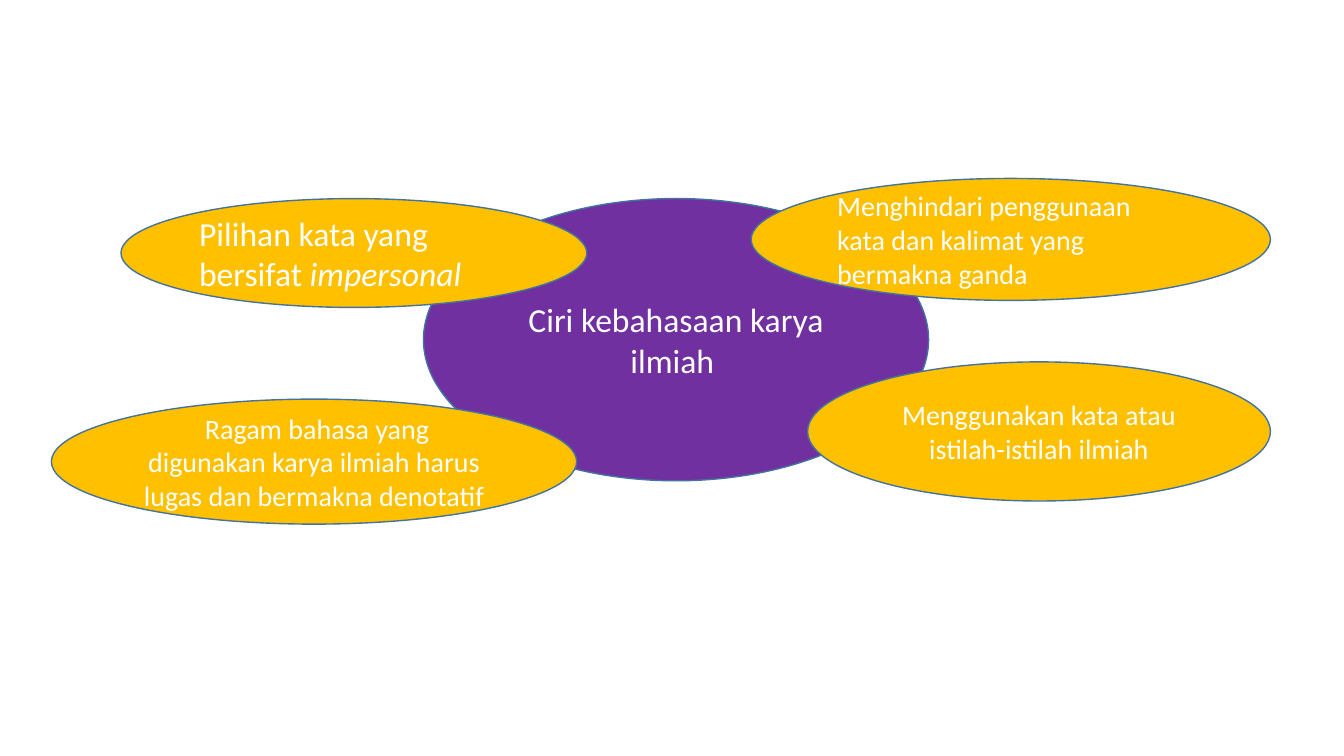
from pptx import Presentation
from pptx.dml.color import RGBColor
from pptx.enum.shapes import MSO_SHAPE
from pptx.enum.text import MSO_ANCHOR, PP_ALIGN
from pptx.util import Inches, Pt

ELLIPSE = MSO_SHAPE.OVAL
MIDDLE = MSO_ANCHOR.MIDDLE
LEFT = PP_ALIGN.LEFT
CENTER = PP_ALIGN.CENTER

FONT = "Calibri"
WHITE = "FFFFFF"
PURPLE = "7030A0"
GOLD = "FFC000"
OUTLINE = "43739E"

TOPIC = ((4.2, 1.97, 5.01, 2.8), "Ciri kebahasaan karya ilmiah ", 24, CENTER)
TRAITS = [
    ((1.2, 1.97, 4.62, 1.08), "Pilihan kata yang bersifat ", 24, LEFT, "impersonal"),
    ((7.45, 1.77, 5.15, 1.21),
     "Menghindari penggunaan kata dan kalimat yang bermakna ganda", 20, LEFT),
    ((0.51, 3.96, 5.21, 1.24),
     " Ragam bahasa yang digunakan karya ilmiah harus lugas dan bermakna denotatif",
     20, CENTER),
    ((8.01, 3.59, 4.59, 1.38),
     "Menggunakan kata atau istilah-istilah ilmiah", 20, CENTER),
]


def rgb(value):
    """Return the colour for a hex string."""
    return RGBColor.from_string(value)


def add_ellipse(s, fill, box, text, size, align, italic_text=""):
    """Add a filled ellipse with one paragraph and an optional italic ending."""
    sp = s.shapes.add_shape(ELLIPSE, *(Inches(v) for v in box))
    sp.shadow.inherit = False
    sp.fill.solid()
    sp.fill.fore_color.rgb = rgb(fill)
    sp.line.color.rgb = rgb(OUTLINE)
    sp.line.width = Pt(1)
    tf = sp.text_frame
    tf.word_wrap = True
    tf.vertical_anchor = MIDDLE
    p = tf.paragraphs[0]
    p.alignment = align
    p.font.name = FONT
    p.font.size = Pt(size)
    p.font.color.rgb = rgb(WHITE)
    p.add_run().text = text
    if italic_text:
        r = p.add_run()
        r.text = italic_text
        r.font.italic = True


def main():
    """Build the slide and save it."""
    prs = Presentation()
    prs.slide_width = Inches(13.33)
    prs.slide_height = Inches(7.5)
    s = prs.slides.add_slide(prs.slide_layouts[6])
    add_ellipse(s, PURPLE, *TOPIC)
    for trait in TRAITS:
        add_ellipse(s, GOLD, *trait)
    prs.save("out.pptx")


if __name__ == "__main__":
    main()
